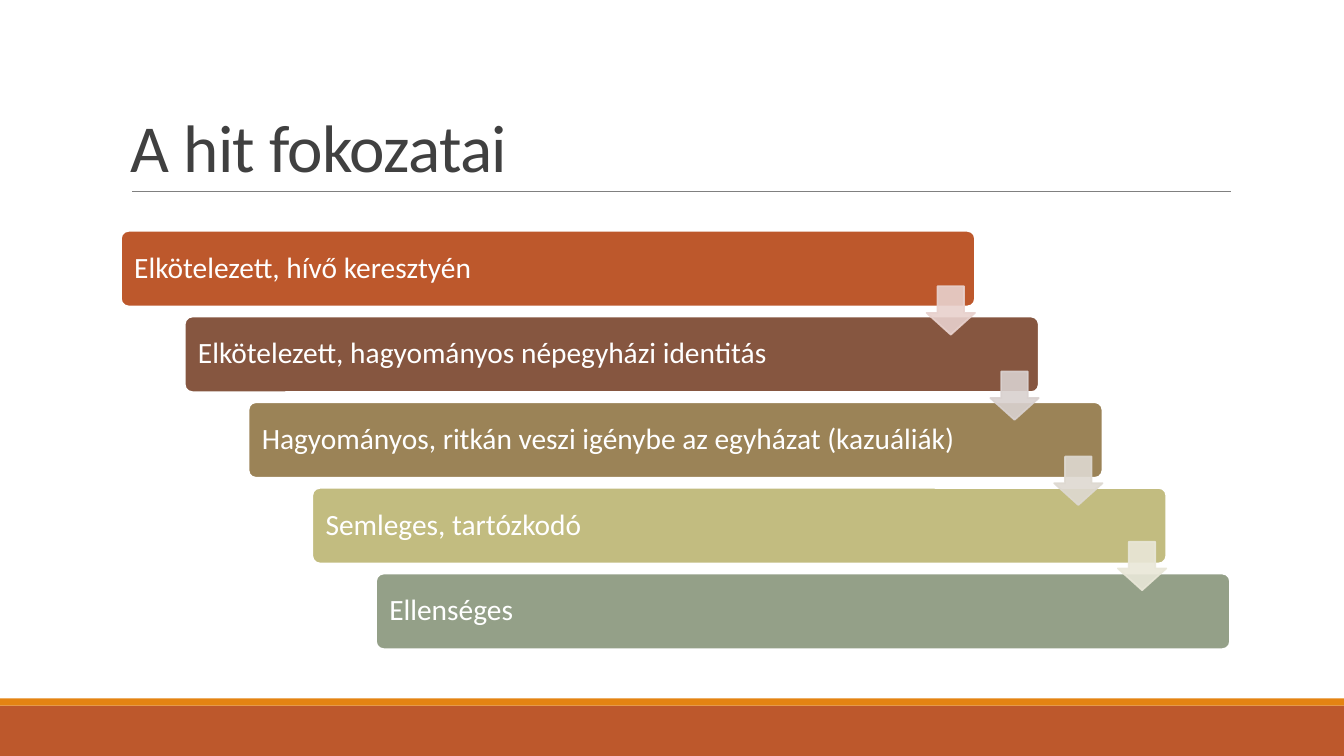
from lxml import etree
from pptx import Presentation, util as u
from pptx.dml.color import RGBColor
from pptx.enum import shapes as sh, text as tx
from pptx.oxml.ns import qn

TITLE = "A hit fokozatai"
STEPS = [
    ("Elkötelezett, hívő keresztyén", "BD582C"),
    ("Elkötelezett, hagyományos népegyházi identitás", "865640"),
    ("Hagyományos, ritkán veszi igénybe az egyházat (kazuáliák)", "9B8357"),
    ("Semleges, tartózkodó", "C2BC80"),
    ("Ellenséges", "94A088"),
]
ARROWS = ["E8D1CD", "D9D1CF", "DED9D1", "E9E7D8"]
BANDS = [(7, 0.5, "BD582C"), (6.93, 0.07, "E48312")]

WIDE, HIGH = 13.33, 7.5
LEFT, ROOM = 1.2, 11
TOP, BAR_W, BAR_H, ROW = 2.29, 8.47, 0.75, 0.85
COL = (ROOM - BAR_W) / (len(STEPS) - 1)
ARROW, DROP, FALL = 0.48, 0.55, 0.845

deck = Presentation()
deck.slide_width, deck.slide_height = u.Inches(WIDE), u.Inches(HIGH)
slide = deck.slides.add_slide(deck.slide_layouts[6])


def rgb(code):
    return RGBColor.from_string(code)


def add(kind, x, y, w, h, fill, line=None):
    shape = slide.shapes.add_shape(kind, *map(u.Inches, (x, y, w, h)))
    shape.shadow.inherit = False
    shape.fill.solid()
    shape.fill.fore_color.rgb = rgb(fill)
    if line:
        shape.line.color.rgb = rgb(line)
        shape.line.width = u.Pt(1.25)
    else:
        shape.line.fill.background()
    return shape


def write(shape, words, size, color, space, anchor):
    frame = shape.text_frame
    frame.word_wrap = True
    frame.vertical_anchor = anchor
    para = frame.paragraphs[0]
    para.text = words
    para.alignment = tx.PP_ALIGN.LEFT
    para.line_spacing = space
    para.font.name, para.font.size = "Calibri", u.Pt(size)
    para.font.color.rgb = rgb(color)
    return para


def fade(shape, share):
    """Set the opacity of fill and line, in percent."""
    for color in shape._element.spPr.iter(qn("a:srgbClr")):
        etree.SubElement(color, qn("a:alpha"), val=str(share * 1000))


for y, h, fill in BANDS:
    add(sh.MSO_SHAPE.RECTANGLE, 0, y, WIDE, h, fill)

rule = slide.shapes.add_connector(
    sh.MSO_CONNECTOR.STRAIGHT, *map(u.Inches, (1.31, 1.9, 12.21, 1.9)))
rule.line.color.rgb = rgb("808080")
rule.line.width = u.Pt(0.5)
etree.SubElement(rule._element.spPr, qn("a:effectLst"))

head = slide.shapes.add_textbox(*map(u.Inches, (LEFT, 0.31, ROOM, 1.59)))
para = write(head, TITLE, 48, "404040", 0.85, tx.MSO_ANCHOR.BOTTOM)
para.runs[0]._r.get_or_add_rPr().set("spc", "-50")

for i, (words, fill) in enumerate(STEPS):
    bar = add(sh.MSO_SHAPE.ROUNDED_RECTANGLE, LEFT + i * COL, TOP + i * ROW,
              BAR_W, BAR_H, fill, "FFFFFF")
    bar.adjustments[0] = 0.1
    bar.text_frame.margin_left = u.Inches(0.11)
    write(bar, words, 21, "FFFFFF", 0.9, tx.MSO_ANCHOR.MIDDLE)

for i, fill in enumerate(ARROWS):
    arrow = add(sh.MSO_SHAPE.DOWN_ARROW, LEFT + BAR_W - ARROW + i * COL,
                TOP + DROP + i * FALL, ARROW, ARROW, fill, fill)
    arrow.adjustments[0], arrow.adjustments[1] = 0.55, 0.45
    fade(arrow, 90)

deck.save("out.pptx")
